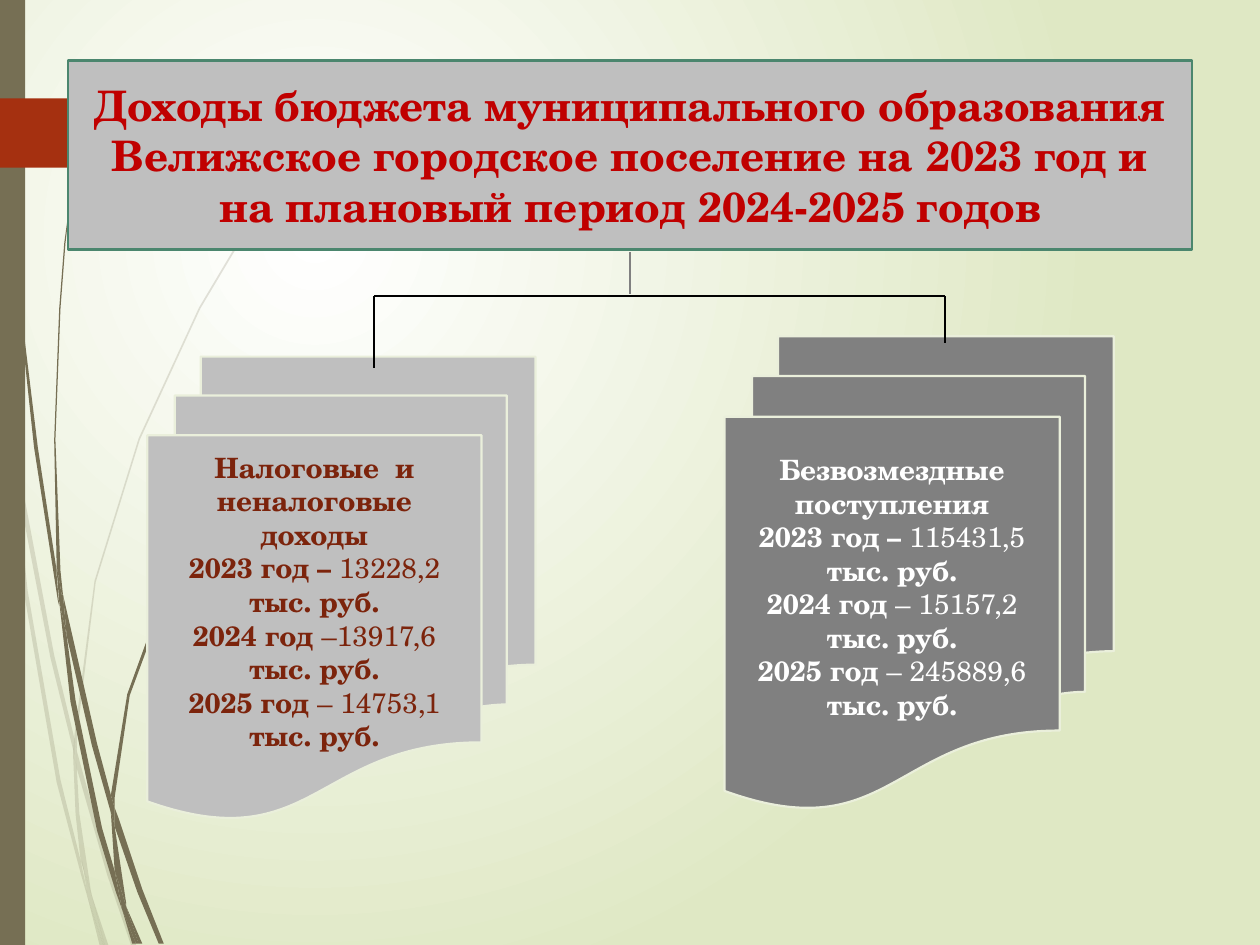
import pptx
import pptx.dml.color
import pptx.enum.dml
import pptx.enum.shapes
import pptx.enum.text
import pptx.oxml
import pptx.oxml.ns
import pptx.util
from lxml import etree

Pt = pptx.util.Pt
SHAPES = pptx.enum.shapes.MSO_SHAPE
FONT = "TeX Gyre Schola"
COLOURS = {
    "white": "FFFFFF", "black": "000000", "meadow": "DFE8C4",
    "olive": "766F54", "flag": "A53010", "silver": "BFBFBF",
    "grey": "808080", "title_line": "4B866E", "title_text": "C00000",
    "sheet_line": "EAEFDB", "tax_text": "7C240C",
}
OUTLINE_UNIT = Pt(0.72)

# Outlines of the grass blades, in units of 0.72 pt
PALE_BLADES = [
    [(8, 350), (6, 322), (0, 282), (0, 299), (7, 344)],
    [(40, 522), (59, 599), (59, 586), (43, 520), (10, 345), (12, 376)],
    [(64, 607), (61, 596), (61, 610), (85, 694), (104, 750), (108, 750), (88, 692)],
    [(83, 750), (86, 750), (73, 711)],
    [(64, 683), (48, 619), (22, 469), (12, 376), (8, 350), (19, 470), (45, 621),
     (64, 693), (70, 714), (69, 707)],
    [(58, 599), (60, 646), (64, 683), (67, 692), (73, 711), (72, 706), (63, 646),
     (61, 610), (61, 608)],
    [(61, 584), (76, 462), (111, 349), (159, 245), (187, 198), (201, 175), (217, 154),
     (217, 153), (201, 175), (186, 197), (158, 244), (110, 348), (75, 461), (59, 584),
     (59, 586), (61, 596)],
    [(70, 714), (79, 750), (82, 750)],
    [(61, 608), (61, 610), (61, 596), (59, 586), (58, 599)],
    [(67, 692), (65, 683), (69, 707), (70, 714), (82, 750), (83, 750), (73, 711)],
]
DARK_BLADES = [
    [(5, 110), (14, 233), (27, 355), (46, 477), (47, 481), (45, 457), (45, 453),
     (30, 355), (15, 232), (6, 109), (4, 48), (3, 0), (2, 0), (3, 48)],
    [(73, 592), (88, 645), (88, 633), (88, 631), (77, 590), (50, 472), (53, 505)],
    [(94, 649), (91, 641), (91, 656), (109, 708), (126, 749), (130, 749), (113, 706)],
    [(91, 691), (81, 657), (60, 556), (53, 505), (47, 477), (56, 557), (77, 659),
     (92, 708), (97, 722), (96, 717)],
    [(50, 472), (48, 453), (44, 349), (48, 245), (52, 193), (58, 141), (51, 193),
     (47, 245), (43, 349), (45, 449), (49, 472)],
    [(110, 749), (113, 749), (100, 719)],
    [(47, 477), (53, 505), (50, 472), (49, 472), (45, 449), (45, 453)],
    [(91, 633), (103, 552), (131, 476), (169, 406), (191, 374), (203, 359), (216, 344),
     (215, 344), (203, 358), (191, 373), (168, 405), (129, 474), (101, 551), (88, 631),
     (91, 641)],
    [(97, 722), (105, 749), (108, 749)],
    [(88, 645), (91, 691), (96, 706), (100, 719), (100, 716), (91, 656), (90, 651)],
    [(88, 645), (90, 651), (91, 656), (91, 641), (88, 631), (88, 633)],
    [(96, 706), (91, 691), (96, 717), (97, 722), (108, 749), (110, 749), (100, 719)],
]
FLAG = [(149, 107), (124, 132), (121, 133), (0, 133), (0, 78), (121, 78), (124, 79),
        (149, 104)]

TITLE = ("Доходы бюджета муниципального образования Велижское городское "
         "поселение на 2023 год и на плановый период 2024-2025 годов")
# Each paragraph is a list of (text, bold) runs
TAX_INCOME = [
    [("Налоговые  и неналоговые доходы", True)],
    [("2023 год – ", True), ("13228,2 ", False), ("тыс. руб.", True)],
    [("2024 год ", True), ("–13917,6 ", False), ("тыс. руб.", True)],
    [("2025 год ", True), ("– 14753,1 ", False), ("тыс. руб.", True)],
]
FREE_RECEIPTS = [
    [("Безвозмездные поступления", True)],
    [("2023 год – ", True), ("115431,5 ", False), ("тыс. руб.", True)],
    [("2024 год ", True), ("– 15157,2 ", False), ("тыс. руб.", True)],
    [("2025 год ", True), ("– 245889,6 ", False), ("тыс. руб.", True)],
]


def rgb(name):
    return pptx.dml.color.RGBColor.from_string(COLOURS[name])


def style_shape(shape, fill, line=None):
    shape.fill.solid()
    shape.fill.fore_color.rgb = rgb(fill)
    if line:
        shape.line.color.rgb = rgb(line)
        shape.line.width = Pt(1.25)
    else:
        shape.line.fill.background()


def write_paragraphs(shape, paragraphs, size, colour):
    frame = shape.text_frame
    frame.word_wrap = True
    frame.auto_size = pptx.enum.text.MSO_AUTO_SIZE.NONE
    frame.vertical_anchor = pptx.enum.text.MSO_ANCHOR.MIDDLE
    for index, runs in enumerate(paragraphs):
        paragraph = frame.add_paragraph() if index else frame.paragraphs[0]
        paragraph.alignment = pptx.enum.text.PP_ALIGN.CENTER
        for text, bold in runs:
            run = paragraph.add_run()
            run.text = text
            run.font.name = FONT
            run.font.size = Pt(size)
            run.font.bold = bold
            run.font.color.rgb = rgb(colour)


def set_background(slide):
    """Radial gradient with its centre in the upper left quarter."""
    fill = slide.background.fill
    fill.gradient()
    for stop, colour in zip(fill.gradient_stops, ("white", "meadow")):
        stop.color.rgb = rgb(colour)
    fill.gradient_stops[0].position = 0
    fill.gradient_stops[1].position = 1
    linear = slide._element.find(".//" + pptx.oxml.ns.qn("a:lin"))
    gradient = linear.getparent()
    gradient.remove(linear)
    circle = etree.SubElement(gradient, pptx.oxml.ns.qn("a:path"), {"path": "circle"})
    etree.SubElement(circle, pptx.oxml.ns.qn("a:fillToRect"),
                     {"l": "50000", "t": "50000", "r": "100000", "b": "100000"})


def add_outline(slide, points, colour, opacity=100):
    builder = slide.shapes.build_freeform(*points[0], scale=OUTLINE_UNIT)
    builder.add_line_segments(points[1:], close=True)
    shape = builder.convert_to_shape()
    shape.shadow.inherit = False
    style_shape(shape, colour)
    if opacity < 100:
        colour_element = shape._element.spPr.find(".//" + pptx.oxml.ns.qn("a:srgbClr"))
        etree.SubElement(colour_element, pptx.oxml.ns.qn("a:alpha"),
                         {"val": str(opacity * 1000)})


def add_decoration(slide):
    for blade in PALE_BLADES:
        add_outline(slide, blade, "olive", 20)
    for blade in DARK_BLADES:
        add_outline(slide, blade, "olive")
    band = slide.shapes.add_shape(SHAPES.RECTANGLE, 0, 0, Pt(14.4), Pt(540))
    band.shadow.inherit = False
    style_shape(band, "olive")
    add_outline(slide, FLAG, "flag")


def place_title(slide):
    title = slide.shapes.title
    title.left, title.top, title.width, title.height = Pt(38.9), Pt(34.6), Pt(642.2), Pt(108)
    geometry = etree.Element(pptx.oxml.ns.qn("a:prstGeom"), {"prst": "roundRect"})
    etree.SubElement(geometry, pptx.oxml.ns.qn("a:avLst"))
    title._element.spPr.insert(1, geometry)
    style_shape(title, "silver", "title_line")
    write_paragraphs(title, [[(TITLE, True)]], 24, "title_text")
    slide.shapes._spTree.append(title._element)


def add_document_stack(slide, left, top, width, height, fill, colour, paragraphs):
    shape = slide.shapes.add_shape(SHAPES.FLOWCHART_MULTIDOCUMENT,
                                   Pt(left), Pt(top), Pt(width), Pt(height))
    shape.shadow.inherit = False
    style_shape(shape, fill, "sheet_line")
    write_paragraphs(shape, paragraphs, 16, colour)
    shape.text_frame.margin_bottom = Pt(23)


def add_line(slide, start_x, start_y, end_x, end_y, colour="black"):
    line = slide.shapes.add_connector(pptx.enum.shapes.MSO_CONNECTOR.STRAIGHT,
                                      Pt(start_x), Pt(start_y), Pt(end_x), Pt(end_y))
    line.line.color.rgb = rgb(colour)
    line.line.width = Pt(0.75)
    etree.SubElement(line._element.spPr, pptx.oxml.ns.qn("a:effectLst"))


def main():
    presentation = pptx.Presentation()
    presentation.slide_width, presentation.slide_height = Pt(720), Pt(540)
    slide = presentation.slides.add_slide(presentation.slide_layouts[5])
    set_background(slide)
    add_decoration(slide)
    add_document_stack(slide, 414, 192.2, 222.5, 270, "grey", "white", FREE_RECEIPTS)
    place_title(slide)
    add_document_stack(slide, 84.2, 203.8, 221.8, 264.2, "silver", "tax_text", TAX_INCOME)
    left, right, branch = 213.8, 540, 169.2
    add_line(slide, left, branch, right, branch)
    add_line(slide, left, branch, left, 210.2)
    add_line(slide, right, branch, right, 195.8)
    add_line(slide, 360, 144, 360, 167.8, "grey")
    presentation.save("out.pptx")


if __name__ == "__main__":
    main()
